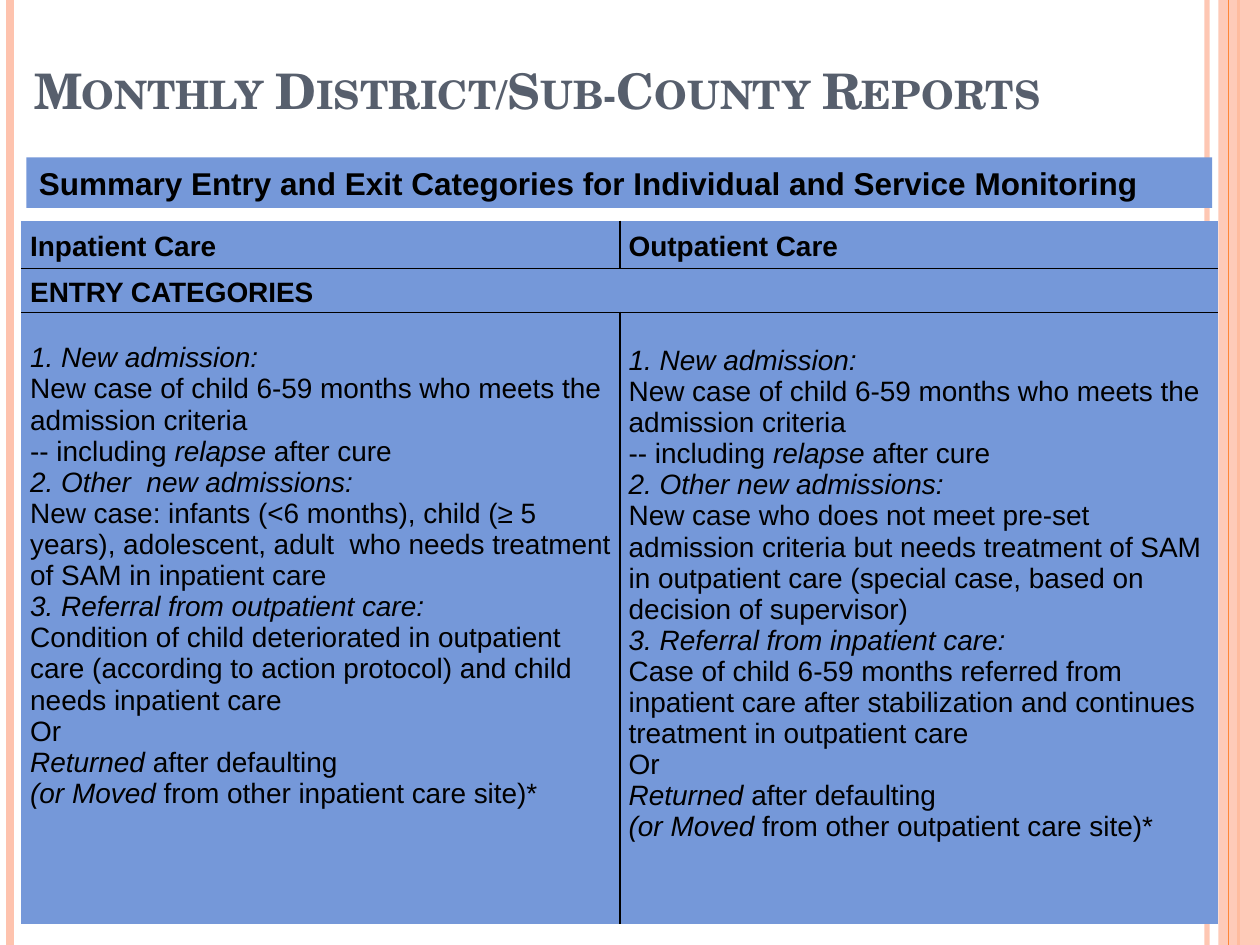
"""Build the monthly district report slide with its entry category table."""
from lxml import etree
from pptx import Presentation
from pptx.dml import color
from pptx.enum import shapes, text
from pptx.oxml import ns
from pptx.util import Inches, Pt

BLACK, BLUE, PEACH, ORANGE, SLATE = "000000", "7598D9", "FEC3AE", "FE8637", "575F6D"
TITLE = "Monthly District/Sub-County Reports"
BANNER = "Summary Entry and Exit Categories for Individual and Service Monitoring"
HEADERS = ["Inpatient Care", "Outpatient Care"]
SECTION = "ENTRY CATEGORIES"
SHARED_START = [
    "_1. New admission:_",
    "New case of child 6-59 months who meets the admission criteria",
    "-- including _relapse _after cure",
]
SHARED_END = ["Or", "_Returned _after defaulting"]
INPATIENT = SHARED_START + [
    "_2. Other  new admissions:_",
    "New case: infants (<6 months), child (≥ 5 years), adolescent, adult  who needs "
    "treatment of SAM in inpatient care",
    "_3. Referral from outpatient care:_",
    "Condition of child deteriorated in outpatient care (according to action protocol) "
    "and child needs inpatient care",
] + SHARED_END + ["_(or Moved _from other inpatient care site)*"]
OUTPATIENT = SHARED_START + [
    "_2. Other new admissions:_",
    "New case who does not meet pre-set admission criteria but needs treatment of SAM "
    "in outpatient care (special case, based on decision of supervisor)",
    "_3. Referral from inpatient care:_",
    "Case of child 6-59 months referred from inpatient care after stabilization and "
    "continues treatment in outpatient care",
] + SHARED_END + ["_(or Moved _from other outpatient care site)*"]
BODY = [(INPATIENT, 0.24), (OUTPATIENT, 0.26)]
COLUMNS = [4.75, 4.75]
ROWS = [0.38, 0.35, 4.85]
RULES_BEHIND = [(9.58, PEACH, 3, 93), (0.08, PEACH, 4.5, 100), (9.83, ORANGE, 1.5, 100)]
RULES_FRONT = [(9.75, ORANGE, 0.75, 100)]
TABLE_TEXT = {"name": "Arial", "size": Pt(16), "bold": False}
HEAD_TEXT = {**TABLE_TEXT, "bold": True}
BANNER_TEXT = {**HEAD_TEXT, "size": Pt(18)}
TITLE_TEXT = {"name": "TeX Gyre Schola", "size": Pt(28), "bold": True}


def paint(target, value, opacity=100):
    """Give a fill or line fill a solid colour and an opacity in percent."""
    target.solid()
    target.fore_color.rgb = color.RGBColor.from_string(value)
    if opacity < 100:
        for node in target._xPr.iter(ns.qn("a:srgbClr")):
            etree.SubElement(node, ns.qn("a:alpha")).set("val", str(opacity * 1000))


def write(frame, lines, style, ink=BLACK, spacing=None):
    """Write paragraphs, with italics between underscores."""
    for number, line in enumerate(lines):
        para = frame.add_paragraph() if number else frame.paragraphs[0]
        para.alignment = text.PP_ALIGN.LEFT
        if spacing:
            para.line_spacing = spacing
        for index, words in enumerate(line.split("_")):
            if words:
                span = para.add_run()
                span.text = words
                for name, value in style.items():
                    setattr(span.font, name, value)
                span.font.italic = index % 2 == 1
                paint(span.font.fill, ink)


def add_rules(page, rules):
    """Draw full-height vertical lines."""
    for x, ink, width, opacity in rules:
        rule = page.shapes.add_connector(
            shapes.MSO_CONNECTOR.STRAIGHT, Inches(x), 0, Inches(x), Inches(7.5))
        paint(rule.line.fill, ink, opacity)
        rule.line.width = Pt(width)
        etree.SubElement(rule._element.spPr, ns.qn("a:effectLst"))


def add_block(page, kind, place, fill, opacity=100):
    """Draw a filled preset shape with no outline."""
    box = page.shapes.add_shape(kind, *map(Inches, place))
    box.shadow.inherit = False
    paint(box.fill, fill, opacity)
    box.line.fill.background()
    return box


def format_cell(cell, row, column):
    """Set the fill, margins and inner borders of a table cell."""
    margins = {"margin_left": 0.07, "margin_right": 0.07, "margin_top": 0, "margin_bottom": 0}
    for name, value in margins.items():
        setattr(cell, name, Inches(value))
    cell.vertical_anchor = text.MSO_ANCHOR.MIDDLE
    divided = row != 1
    drawn = {"lnL": divided and column == 1, "lnR": divided and column == 0,
             "lnT": row > 0, "lnB": row < len(ROWS) - 1}
    props = cell._tc.get_or_add_tcPr()
    for side, shown in drawn.items():
        edge = etree.SubElement(props, ns.qn("a:" + side), w=str(Pt(1)))
        if shown:
            solid = etree.SubElement(edge, ns.qn("a:solidFill"))
            etree.SubElement(solid, ns.qn("a:srgbClr"), val=BLACK)
        else:
            etree.SubElement(edge, ns.qn("a:noFill"))
    paint(cell.fill, BLUE)


def add_categories(page):
    """Add the table of entry categories."""
    table = page.shapes.add_table(
        len(ROWS), len(COLUMNS), Inches(0.17), Inches(1.75),
        Inches(sum(COLUMNS)), Inches(sum(ROWS))).table
    for column, width in zip(table.columns, COLUMNS):
        column.width = Inches(width)
    for row, height in zip(table.rows, ROWS):
        row.height = Inches(height)
    for row in range(len(ROWS)):
        for column in range(len(COLUMNS)):
            format_cell(table.cell(row, column), row, column)
    table.cell(1, 0).merge(table.cell(1, 1))
    write(table.cell(1, 0).text_frame, [SECTION], HEAD_TEXT, spacing=1.15)
    for column, (header, (lines, top)) in enumerate(zip(HEADERS, BODY)):
        write(table.cell(0, column).text_frame, [header], HEAD_TEXT, spacing=1.15)
        cell = table.cell(2, column)
        cell.vertical_anchor = text.MSO_ANCHOR.TOP
        cell.margin_top = Inches(top)
        write(cell.text_frame, lines, TABLE_TEXT)


def main():
    """Build and save the deck."""
    deck = Presentation()
    deck.slide_width, deck.slide_height = Inches(10), Inches(7.5)
    page = deck.slides.add_slide(deck.slide_layouts[5])
    paint(page.background.fill, "FFFFFF")
    add_rules(page, RULES_BEHIND)
    add_block(page, shapes.MSO_SHAPE.RECTANGLE, (9.67, 0, 0.33, 7.5), PEACH, 87)
    add_rules(page, RULES_FRONT)
    add_block(page, shapes.MSO_SHAPE.OVAL, (8.92, 6.25, 0.6, 0.6), ORANGE)
    title = page.shapes.title
    place = {"left": 0.17, "top": 0.17, "width": 9.25, "height": 0.83}
    for name, value in place.items():
        setattr(title, name, Inches(value))
    title.text_frame.vertical_anchor = text.MSO_ANCHOR.BOTTOM
    write(title.text_frame, [TITLE], TITLE_TEXT, SLATE)
    title.text_frame.paragraphs[0].runs[0].font._element.set("cap", "small")
    add_categories(page)
    banner = add_block(page, shapes.MSO_SHAPE.RECTANGLE, (0.21, 1.25, 9.41, 0.4), BLUE)
    banner.text_frame.word_wrap = True
    banner.text_frame.vertical_anchor = text.MSO_ANCHOR.MIDDLE
    write(banner.text_frame, [BANNER], BANNER_TEXT)
    deck.save("out.pptx")


if __name__ == "__main__":
    main()
